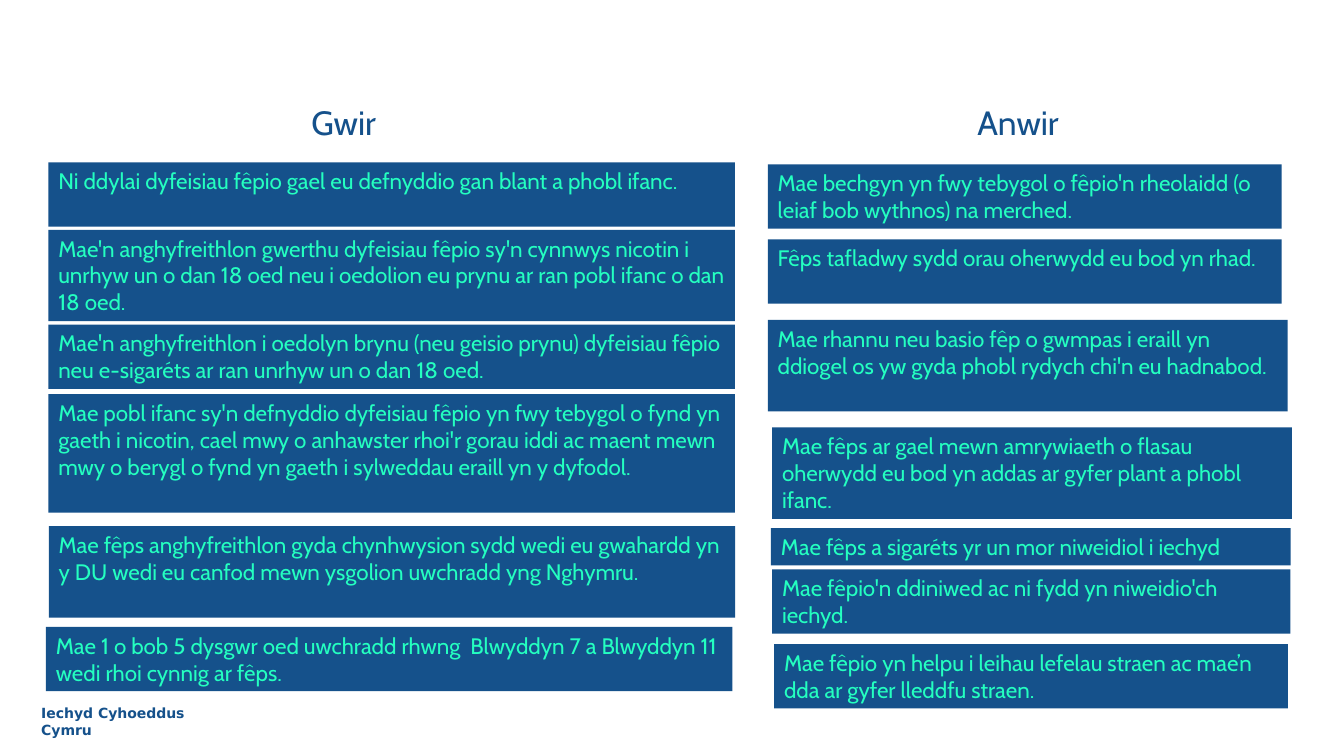
"""Build the Welsh true-or-false slide about vaping."""
import pptx
import pptx.dml.color
import pptx.enum.shapes
import pptx.enum.text
import pptx.util

Cm = pptx.util.Cm
NAVY, MINT = "15518B", "24FFC0"
LINE_HEIGHT, PADDING = 0.685, 0.25

HEADINGS = [
    ("Gwir", 7.6, 1.88, 4.52, 1.83),
    ("Anwir", 24.38, 2.46, 3.71, 1.25),
]
FOOTER = ("Iechyd Cyhoeddus Cymru", 0.79, 17.63, 4.6, 1.09)

# left, top, width, lines of height, text
TRUE_STATEMENTS = [
    (1.22, 4.09, 17.3, 2, "Ni ddylai dyfeisiau fêpio gael eu defnyddio gan blant a phobl ifanc."),
    (1.22, 5.79, 17.3, 3, "Mae'n anghyfreithlon gwerthu dyfeisiau fêpio sy'n cynnwys nicotin i unrhyw un "
                          "o dan 18 oed neu i oedolion eu prynu ar ran pobl ifanc o dan 18 oed."),
    (1.22, 8.18, 17.3, 2, "Mae'n anghyfreithlon i oedolyn brynu (neu geisio prynu) dyfeisiau fêpio "
                          "neu e-sigaréts ar ran unrhyw un o dan 18 oed."),
    (1.22, 9.93, 17.3, 4, "Mae pobl ifanc sy'n defnyddio dyfeisiau fêpio yn fwy tebygol o fynd yn gaeth "
                          "i nicotin, cael mwy o anhawster rhoi'r gorau iddi ac maent mewn mwy o berygl "
                          "o fynd yn gaeth i sylweddau eraill yn y dyfodol."),
    (1.23, 13.26, 17.3, 3, "Mae fêps anghyfreithlon gyda chynhwysion sydd wedi eu gwahardd yn y DU "
                           "wedi eu canfod mewn ysgolion uwchradd yng Nghymru."),
    (1.16, 15.8, 17.3, 2, "Mae 1 o bob 5 dysgwr oed uwchradd rhwng  Blwyddyn 7 a Blwyddyn 11 "
                          "wedi rhoi cynnig ar fêps."),
]
FALSE_STATEMENTS = [
    (19.35, 4.14, 12.95, 2, "Mae bechgyn yn fwy tebygol o fêpio'n rheolaidd (o leiaf bob wythnos) na merched."),
    (19.35, 6.03, 12.95, 2, "Fêps tafladwy sydd orau oherwydd eu bod yn rhad."),
    (19.35, 8.06, 13.1, 3, "Mae rhannu neu basio fêp o gwmpas i eraill yn ddiogel os yw gyda phobl "
                           "rydych chi'n eu hadnabod."),
    (19.46, 10.77, 13.1, 3, "Mae fêps ar gael mewn amrywiaeth o flasau oherwydd eu bod yn addas "
                            "ar gyfer plant a phobl ifanc."),
    (19.43, 13.31, 13.1, 1, "Mae fêps a sigaréts yr un mor niweidiol i iechyd"),
    (19.46, 14.35, 13.06, 2, "Mae fêpio'n ddiniwed ac ni fydd yn niweidio'ch iechyd."),
    (19.51, 16.23, 12.95, 2, "Mae fêpio yn helpu i leihau lefelau straen ac mae’n dda ar gyfer lleddfu straen."),
]


def paint(color_format, value):
    color_format.rgb = pptx.dml.color.RGBColor.from_string(value)


def write(box, text, size, color, font="Cabin", bold=False, anchor="TOP"):
    frame = box.text_frame
    frame.word_wrap = True
    frame.vertical_anchor = pptx.enum.text.MSO_ANCHOR[anchor]
    para = frame.paragraphs[0]
    para.alignment = pptx.enum.text.PP_ALIGN.LEFT
    span = para.add_run()
    span.text = text
    span.font.name = font
    span.font.size = pptx.util.Pt(size)
    span.font.bold = bold
    paint(span.font.color, color)


def add_label(page, label, **style):
    text, *place = label
    write(page.shapes.add_textbox(*map(Cm, place)), text, **style)


def add_statement(page, left, top, width, lines, text):
    height = PADDING + LINE_HEIGHT * lines
    box = page.shapes.add_shape(pptx.enum.shapes.MSO_SHAPE.RECTANGLE,
                                Cm(left), Cm(top), Cm(width), Cm(height))
    box.shadow.inherit = False
    box.fill.solid()
    paint(box.fill.fore_color, NAVY)
    box.line.fill.background()
    write(box, text, size=16, color=MINT)


def main():
    deck = pptx.Presentation()
    deck.slide_width, deck.slide_height = Cm(33.87), Cm(19.05)
    page = deck.slides.add_slide(deck.slide_layouts[6])
    add_label(page, FOOTER, size=10, color=NAVY, font="DejaVu Sans", bold=True)
    for heading in HEADINGS:
        add_label(page, heading, size=24, color=NAVY, anchor="BOTTOM")
    for statement in TRUE_STATEMENTS + FALSE_STATEMENTS:
        add_statement(page, *statement)
    deck.save("out.pptx")


if __name__ == "__main__":
    main()
